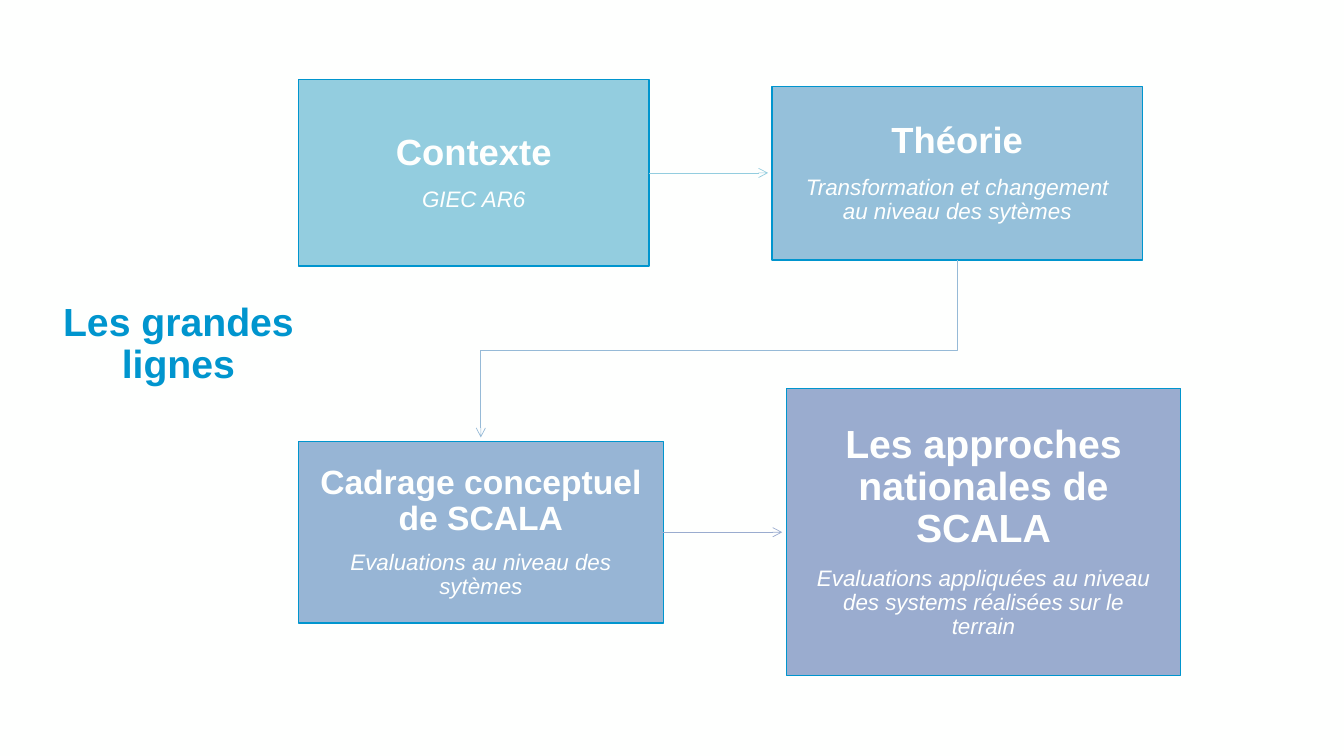
from pptx import Presentation
from pptx.dml.color import RGBColor
from pptx.enum.shapes import MSO_CONNECTOR, MSO_SHAPE
from pptx.enum.text import MSO_ANCHOR, PP_ALIGN
from pptx.oxml.ns import qn
from pptx.util import Inches, Pt
from lxml import etree

RECTANGLE = MSO_SHAPE.RECTANGLE
STRAIGHT = MSO_CONNECTOR.STRAIGHT
MIDDLE, BOTTOM = MSO_ANCHOR.MIDDLE, MSO_ANCHOR.BOTTOM
CENTER = PP_ALIGN.CENTER

WIDTH, HEIGHT = Inches(13.33), Inches(7.5)
FONT, WHITE, BLUE = "Arial", "FEFFFE", "0095CE"
DETAIL_SIZE = 16
ARROW_GAP = Inches(0.04)

# Content: areas are left, top, width, height in percent of the slide
TITLE = ("Les grandes lignes", 28, (0.9, 43.2, 24.75, 8.65))
STEPS = [
    # heading, heading size, detail, fill, area, inset in inches
    ("Contexte", 26, "GIEC AR6", "93CDDF", (22.2, 10.55, 26.1, 24.65), 0.2),
    ("Théorie", 26, "Transformation et changement au niveau des sytèmes",
     "95C0DA", (57.45, 11.45, 27.55, 22.95), 0.2),
    ("Cadrage conceptuel de SCALA", 24, "Evaluations au niveau des sytèmes",
     "97B5D5", (22.2, 58.4, 27.15, 24), 0.19),
    ("Les approches nationales de SCALA", 28,
     "Evaluations appliquées au niveau des systems réalisées sur le terrain",
     "9AACCF", (58.5, 51.35, 29.35, 38), 0.22),
]
ARROW_COLORS = ["93CDDF", "96BAD7", "9AACCF"]


def rgb(value):
    return RGBColor.from_string(value)


def place(area):
    left, top, width, height = area
    return (int(WIDTH * left / 100), int(HEIGHT * top / 100),
            int(WIDTH * width / 100), int(HEIGHT * height / 100))


def style(paragraph, text, size, color, bold=False, italic=False):
    paragraph.text = text
    paragraph.alignment = CENTER
    paragraph.line_spacing = 0.9
    font = paragraph.font
    font.name, font.size = FONT, Pt(size)
    font.bold, font.italic = bold, italic
    font.color.rgb = rgb(color)


def add_step(slide, heading, size, detail, fill, area, inset):
    box = slide.shapes.add_shape(RECTANGLE, *place(area))
    box.shadow.inherit = False
    box.fill.solid()
    box.fill.fore_color.rgb = rgb(fill)
    box.line.color.rgb = rgb(BLUE)
    box.line.width = Pt(1)
    frame = box.text_frame
    frame.word_wrap = True
    frame.vertical_anchor = MIDDLE
    frame.margin_left = frame.margin_right = Inches(inset)
    frame.margin_top = frame.margin_bottom = Inches(inset)
    style(frame.paragraphs[0], heading, size, WHITE, bold=True)
    frame.paragraphs[0].space_after = Pt(round(size * 0.4, 1))
    style(frame.add_paragraph(), detail, DETAIL_SIZE, WHITE, italic=True)
    return box


def finish_arrow(arrow, color):
    arrow.line.color.rgb = rgb(color)
    arrow.line.width = Pt(0.5)
    properties = arrow.element.spPr
    etree.SubElement(properties.find(qn("a:ln")), qn("a:tailEnd"), type="arrow")
    etree.SubElement(properties, qn("a:effectLst"))


def connect_across(slide, source, target, color):
    y = source.top + source.height // 2
    arrow = slide.shapes.add_connector(
        STRAIGHT, source.left + source.width, y, target.left - ARROW_GAP, y)
    finish_arrow(arrow, color)


def connect_down(slide, source, target, color):
    start_x = source.left + source.width // 2
    start_y = source.top + source.height
    end_x = target.left + target.width // 2
    end_y = target.top - ARROW_GAP
    middle_y = (start_y + target.top) // 2
    builder = slide.shapes.build_freeform(start_x, start_y)
    builder.add_line_segments(
        [(start_x, middle_y), (end_x, middle_y), (end_x, end_y)], close=False)
    arrow = builder.convert_to_shape()
    arrow.fill.background()
    finish_arrow(arrow, color)


def main():
    presentation = Presentation()
    presentation.slide_width, presentation.slide_height = WIDTH, HEIGHT
    slide = presentation.slides.add_slide(presentation.slide_layouts[6])
    slide.background.fill.solid()
    slide.background.fill.fore_color.rgb = rgb(WHITE)

    # Steps and the arrows between them
    context, theory, framing, approaches = [
        add_step(slide, *step) for step in STEPS]
    connect_across(slide, context, theory, ARROW_COLORS[0])
    connect_down(slide, theory, framing, ARROW_COLORS[1])
    connect_across(slide, framing, approaches, ARROW_COLORS[2])

    # Title
    text, size, area = TITLE
    frame = slide.shapes.add_textbox(*place(area)).text_frame
    frame.word_wrap = True
    frame.vertical_anchor = BOTTOM
    style(frame.paragraphs[0], text, size, BLUE, bold=True)

    presentation.save("out.pptx")


if __name__ == "__main__":
    main()
